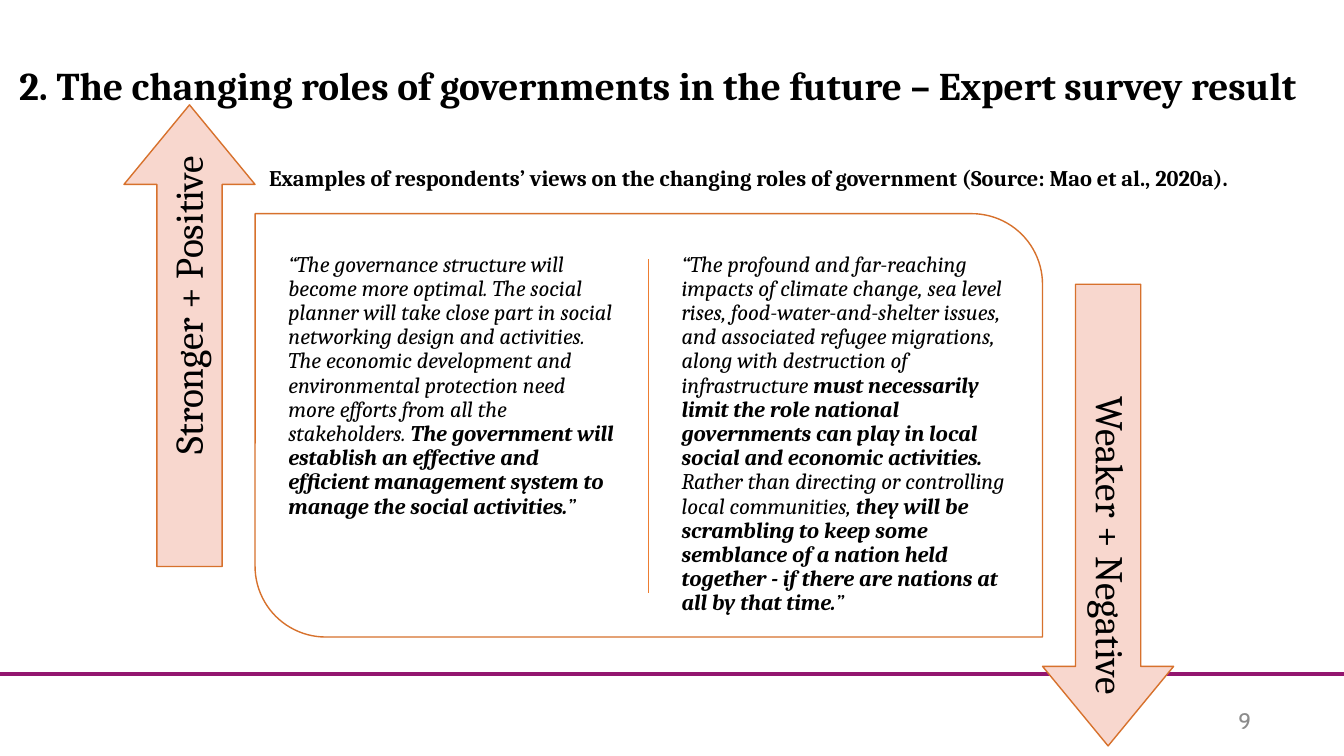
from pptx import Presentation
from pptx.dml.color import RGBColor
from pptx.enum.shapes import MSO_CONNECTOR as CONN, MSO_SHAPE as SHAPE
from pptx.enum.text import MSO_ANCHOR as ANCHOR, MSO_AUTO_SIZE as FIT, PP_ALIGN as ALIGN
from pptx.oxml.ns import qn
from pptx.util import Pt
from lxml import etree

PX = 9144  # 100 px to the inch
EDGE = "D7712C"
QUOTES = [
    [("“The governance structure will become more optimal. The social planner will take "
      "close part in social networking design and activities. The economic development and "
      "environmental protection need more efforts from all the stakeholders. ", False),
     ("The government will establish an effective and efficient management system to manage "
      "the social activities.", True),
     ("”", False)],
    [("“The profound and far-reaching impacts of climate change, sea level rises, "
      "food-water-and-shelter issues, and associated refugee migrations, along with "
      "destruction of infrastructure ", False),
     ("must necessarily limit the role national governments can play in local social and "
      "economic activities. ", True),
     ("Rather than directing or controlling local communities, ", False),
     ("they will be scrambling to keep some semblance of a nation held together - if there "
      "are nations at all by that time.", True),
     ("”", False)],
]


def px(*nums):
    return [n * PX for n in nums]


def rgb(code):
    return RGBColor.from_string(code)


def write(box, runs, size, align=ALIGN.LEFT, inset=None, anchor=ANCHOR.MIDDLE,
          face="Cambria", color="000000", bold=None, italic=None, space=None):
    """Fill a box with one paragraph made of (text, bold) runs."""
    frame = box.text_frame
    frame.word_wrap = True
    frame.auto_size = FIT.NONE
    frame.vertical_anchor = anchor
    if inset is not None:
        frame.margin_left = frame.margin_right = inset * PX
        frame.margin_top = frame.margin_bottom = inset * PX
    para = frame.paragraphs[0]
    para.alignment = align
    para.line_spacing = space
    font = para.font
    font.name, font.size, font.color.rgb = face, Pt(size), rgb(color)
    font.bold, font.italic = bold, italic
    for text, strong in runs:
        run = para.add_run()
        run.text = text
        if strong is not None:
            run.font.bold = strong


def label(slide, box, text, size, **style):
    write(slide.shapes.add_textbox(*px(*box)), [(text, None)], size, **style)


def rule(slide, ends, color, width):
    line = slide.shapes.add_connector(CONN.STRAIGHT, *px(*ends))
    line.line.color.rgb = rgb(color)
    line.line.width = Pt(width)
    etree.SubElement(line._element.spPr, qn("a:effectLst"))


def shape(slide, kind, box, fill, adjust):
    item = slide.shapes.add_shape(kind, *px(*box))
    item.shadow.inherit = False
    item.fill.solid()
    item.fill.fore_color.rgb = rgb(fill)
    item.line.color.rgb = rgb(EDGE)
    item.line.width = Pt(1)
    for spot, value in enumerate(adjust):
        item.adjustments[spot] = value
    return item


def heading(slide, box):
    title = slide.shapes.title
    title.left, title.top, title.width, title.height = px(*box)
    write(title, [("2. The changing roles of governments in the future – Expert survey result ",
                   None)], 28, align=ALIGN.CENTER, bold=True, space=0.9)


def panel(slide, box):
    """Draw the rounded card with the two quotes and the rule between them."""
    left, top, width, height = box
    shape(slide, SHAPE.ROUND_2_DIAG_RECTANGLE, box, "FFFFFF", (0, 0.167))
    mid = left + width // 2
    rule(slide, (mid, top + 45, mid, top + height - 44), "ED7D31", 1)
    for col, quote in enumerate(QUOTES):
        area = px(left + 26 + col * width // 2, top + 32, 338, 356)
        write(slide.shapes.add_textbox(*area), quote, 16, inset=7,
              anchor=ANCHOR.TOP, italic=True, space=0.9)


def trend(slide, box, text, turn, shift):
    """Turn an arrow to fill an upright box, its label moved by shift (x, y)."""
    left, top, width, height = box
    mid_x, mid_y = left + width // 2, top + height // 2
    arrow = shape(slide, SHAPE.RIGHT_ARROW,
                  (mid_x - height // 2, mid_y - width // 2, height, width),
                  "F8D7CE", (0.498, 0.607))
    arrow.rotation = turn
    wide, high = 419, 65
    tag = slide.shapes.add_textbox(*px(mid_x + shift[0] - wide // 2,
                                       mid_y + shift[1] - high // 2, wide, high))
    tag.rotation = turn
    write(tag, [(text, None)], 28, align=ALIGN.RIGHT, inset=12, space=0.9)


def main():
    deck = Presentation()
    deck.slide_width, deck.slide_height = px(1333, 750)
    slide = deck.slides.add_slide(deck.slide_layouts[5])
    rule(slide, (0, 669, 1333, 669), "93166F", 3)
    heading(slide, (0, 33, 1313, 108))
    label(slide, (1202, 695, 65, 40), "9", 16, align=ALIGN.CENTER,
          face="Cabin", color="8C8C8C")
    panel(slide, (253, 212, 781, 420))
    trend(slide, (123, 104, 130, 458), "Stronger + Positive", 270, (0, 19))
    trend(slide, (1034, 282, 130, 458), "Weaker + Negative", 90, (0, -20))
    label(slide, (257, 158, 1010, 37),
          "Examples of respondents’ views on the changing roles of government "
          "(Source: Mao et al., 2020a).", 16, anchor=ANCHOR.TOP, bold=True)
    deck.save("out.pptx")


if __name__ == "__main__":
    main()
